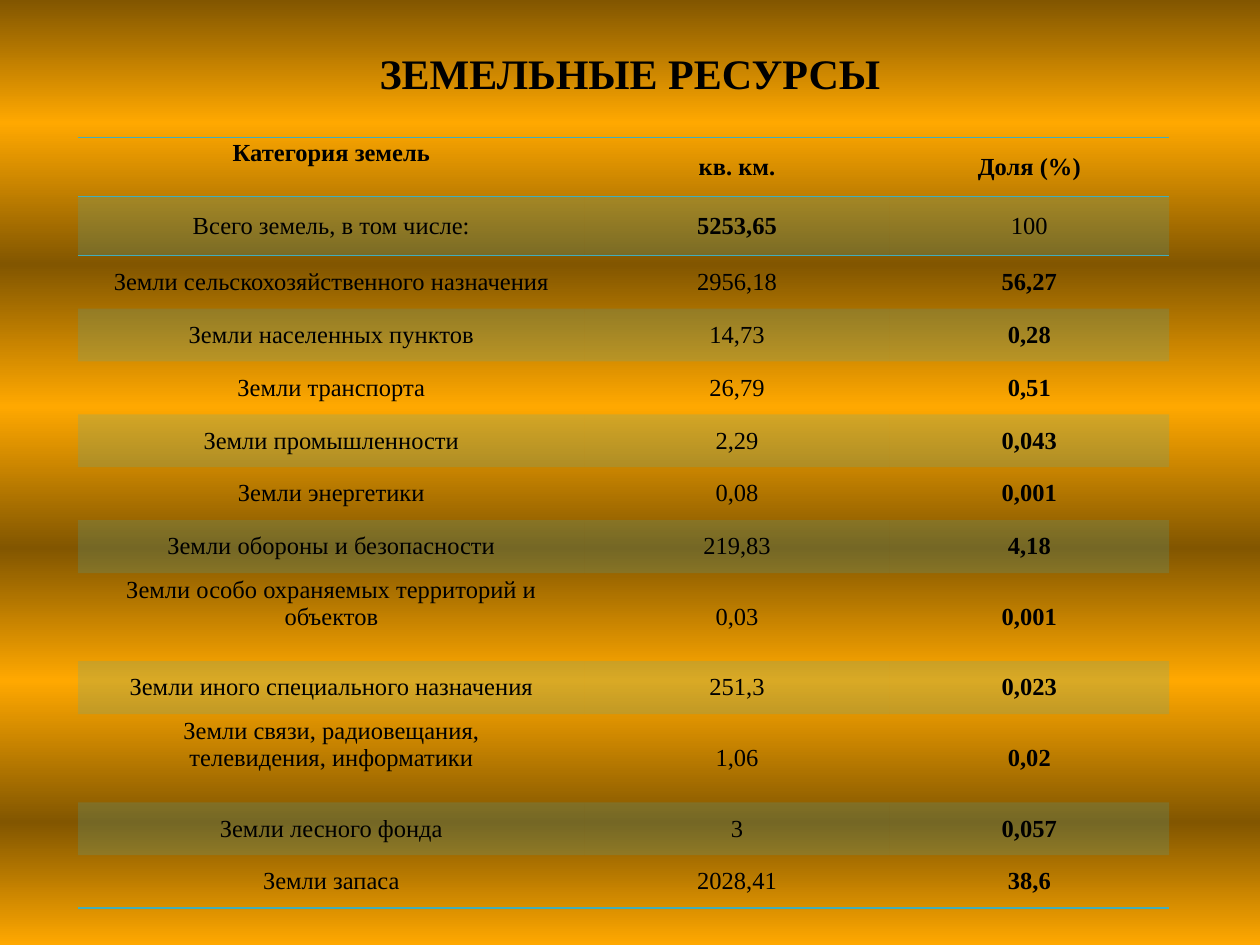
from dataclasses import dataclass

from lxml import etree
from pptx import Presentation
from pptx import util as u
from pptx.dml.color import RGBColor
from pptx.enum import text
from pptx.oxml.ns import qn


@dataclass(frozen=True)
class Theme:
    font: str = "Times New Roman"
    ink: str = "000000"
    accent: str = "41AEBD"
    dark: str = "825600"
    light: str = "FFA800"
    band_alpha: int = 20
    title_size: int = 24
    body_size: int = 14
    rule_width: int = 1


THEME = Theme()

HEADER = ("Категория земель", "кв. км.", "Доля (%)")
LANDS = [
    ("Всего земель, в том числе:", "5253,65", "100"),
    ("Земли сельскохозяйственного назначения", "2956,18", "56,27"),
    ("Земли населенных пунктов", "14,73", "0,28"),
    ("Земли транспорта", "26,79", "0,51"),
    ("Земли промышленности", "2,29", "0,043"),
    ("Земли энергетики", "0,08", "0,001"),
    ("Земли обороны и безопасности", "219,83", "4,18"),
    ("Земли особо охраняемых территорий и объектов", "0,03", "0,001"),
    ("Земли иного специального назначения", "251,3", "0,023"),
    ("Земли связи, радиовещания,\nтелевидения, информатики", "1,06", "0,02"),
    ("Земли лесного фонда", "3", "0,057"),
    ("Земли запаса", "2028,41", "38,6"),
]
COLUMN_WIDTHS = (4.02, 2.42, 2.22)
TOP_ROW, PLAIN_ROW, TALL_ROW = 0.47, 0.42, 0.7
TALL_ROWS = (8, 10)
RAISED_ROWS = (0, *TALL_ROWS)  # category text sits above the middle
NO_STYLE = "{2D5ABB26-0587-4C30-8999-92F81FD0307C}"


def add_color(parent, color):
    return etree.SubElement(parent, qn("a:srgbClr"), val=color)


def style_text(frame, size, bold):
    for paragraph in frame.paragraphs:
        paragraph.alignment = text.PP_ALIGN.CENTER
        for run in paragraph.runs:
            run.font.name = THEME.font
            run.font.size = u.Pt(size)
            run.font.bold = bold
            run.font.color.rgb = RGBColor.from_string(THEME.ink)


def paint_background(slide):
    fill = slide.background.fill
    fill.gradient()
    fill.gradient_angle = 270
    # Alternating dark and light stops
    stops = slide.element.find(".//" + qn("a:gsLst"))
    for stop in list(stops):
        stops.remove(stop)
    for i, percent in enumerate((0, 13, 28, 43, 58, 72, 87, 100)):
        stop = etree.SubElement(stops, qn("a:gs"), pos=str(percent * 1000))
        add_color(stop, THEME.light if i % 2 or percent == 100 else THEME.dark)


def add_title(slide, left, top, width, height):
    title = slide.shapes.add_textbox(left, top, width, height)
    frame = title.text_frame
    frame.word_wrap = True
    frame.vertical_anchor = text.MSO_ANCHOR.MIDDLE
    frame.text = "ЗЕМЕЛЬНЫЕ РЕСУРСЫ"
    frame.paragraphs[0].line_spacing = 0.9
    style_text(frame, THEME.title_size, True)


def fill_band(cell):
    cell.fill.solid()
    cell.fill.fore_color.rgb = RGBColor.from_string(THEME.accent)
    color = cell.fill._xPr.find(".//" + qn("a:srgbClr"))
    etree.SubElement(color, qn("a:alpha"), val=str(THEME.band_alpha * 1000))


def add_rules(cell, sides):
    properties = cell._tc.get_or_add_tcPr()
    for i, side in enumerate(sides):
        line = etree.Element(qn("a:ln" + side), w=str(u.Pt(THEME.rule_width)))
        add_color(etree.SubElement(line, qn("a:solidFill")), THEME.accent)
        properties.insert(i, line)


def add_land_table(slide, left, top, width, height):
    rows = [HEADER, *LANDS]
    last = len(rows) - 1
    frame = slide.shapes.add_table(len(rows), len(HEADER), left, top, width, height)
    table = frame.table
    table.first_row = table.horz_banding = False
    table._tbl.tblPr.find(qn("a:tableStyleId")).text = NO_STYLE
    for column, column_width in zip(table.columns, COLUMN_WIDTHS):
        column.width = u.Inches(column_width)

    rules = {0: "TB", 1: "T", last: "B"}
    for r, values in enumerate(rows):
        row_height = TOP_ROW if r < 2 else TALL_ROW if r in TALL_ROWS else PLAIN_ROW
        table.rows[r].height = u.Inches(row_height)
        # Bold: the header, the total area and every share below the total
        bold_columns = {0: (0, 1, 2), 1: (1,)}.get(r, (2,))
        for c, value in enumerate(values):
            cell = table.cell(r, c)
            cell.text_frame.text = value
            cell.vertical_anchor = text.MSO_ANCHOR.MIDDLE
            cell.margin_left = cell.margin_right = u.Inches(0.07)
            cell.margin_top = 0
            raised = c == 0 and r in RAISED_ROWS
            cell.margin_bottom = u.Inches(0.22 if raised else 0)
            style_text(cell.text_frame, THEME.body_size, c in bold_columns)
            if r % 2:
                fill_band(cell)
            else:
                cell.fill.background()
            add_rules(cell, rules.get(r, ""))


def main():
    deck = Presentation()
    deck.slide_width, deck.slide_height = u.Inches(10), u.Inches(7.5)
    slide = deck.slides.add_slide(deck.slide_layouts[6])
    paint_background(slide)
    add_title(slide, u.Inches(0), u.Inches(0.31), u.Inches(10), u.Inches(0.58))
    add_land_table(slide, u.Inches(0.62), u.Inches(1.09), u.Inches(8.66), u.Inches(6.1))
    deck.save("out.pptx")


if __name__ == "__main__":
    main()
